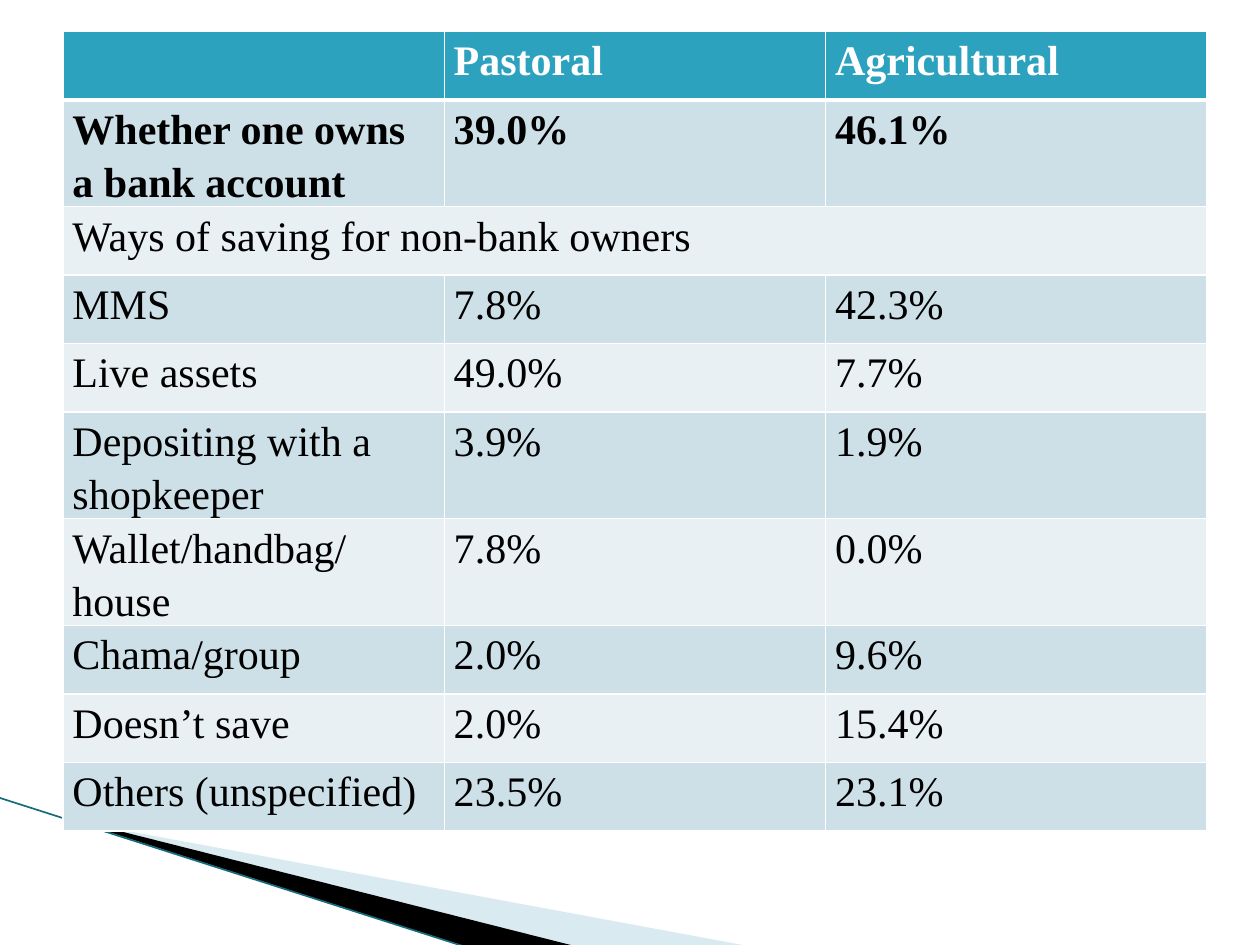
from lxml import etree
from pptx import Presentation
from pptx.dml.color import RGBColor
from pptx.enum.shapes import MSO_CONNECTOR
from pptx.oxml.ns import qn
from pptx.util import Inches, Pt

STRAIGHT = MSO_CONNECTOR.STRAIGHT
WHITE = RGBColor(0xFF, 0xFF, 0xFF)
BLACK = RGBColor(0x00, 0x00, 0x00)
HEADER_TEAL = RGBColor(0x2D, 0xA2, 0xBF)
BAND_DARK = RGBColor(0xCD, 0xE0, 0xE8)
BAND_LIGHT = RGBColor(0xE8, 0xF0, 0xF4)
WEDGE_BLUE = RGBColor(0xA0, 0xCB, 0xDC)
LINE_TEAL = RGBColor(0x16, 0x6B, 0x7E)
FONT = "Times New Roman"


def write_cell(cell, text, color=BLACK, bold=False):
    cell.margin_left = cell.margin_right = Pt(5.4)
    cell.margin_top = cell.margin_bottom = 0
    para = cell.text_frame.paragraphs[0]
    para.line_spacing = 1.15
    para.space_after = Pt(10)
    para.font.size = Pt(24)
    if text:
        span = para.add_run()
        span.text = text
        span.font.name = FONT
        span.font.size = Pt(24)
        span.font.bold = bold
        span.font.color.rgb = color


def add_border(cell, side, points):
    properties = cell._tc.get_or_add_tcPr()
    border = etree.SubElement(properties, qn(f"a:ln{side}"), w=str(Pt(points)))
    fill = etree.SubElement(border, qn("a:solidFill"))
    etree.SubElement(fill, qn("a:srgbClr"), val=str(WHITE))


deck = Presentation()
deck.slide_width = Inches(10)
deck.slide_height = Inches(7.5)
page = deck.slides.add_slide(deck.slide_layouts[6])

# Corner wedges: colour, opacity, frame, corners
wedges = [
    (WEDGE_BLUE, 40, (0.78, 5.47, 4.16, 1.58),
     [(0.55, 6.51), (5.95, 7.51), (4.56, 7.51), (0.55, 6.5)]),
    (BLACK, 100, (-0.06, 6.33, 4.16, 0.92),
     [(0.53, 6.49), (4.57, 7.51), (3.72, 7.52), (0.54, 6.5)]),
]
for color, opacity, frame, corners in wedges:
    points = [(Inches(x), Inches(y)) for x, y in corners]
    builder = page.shapes.build_freeform(*points[0])
    builder.add_line_segments(points[1:], close=True)
    wedge = builder.convert_to_shape()
    wedge.shadow.inherit = False
    wedge.line.fill.background()
    wedge.fill.solid()
    wedge.fill.fore_color.rgb = color
    if opacity < 100:
        color_node = wedge._element.spPr.find(".//" + qn("a:srgbClr"))
        etree.SubElement(color_node, qn("a:alpha"), val=str(opacity * 1000))

    # The outline reaches beyond its frame, so its points are set from the frame
    left, top, width, height = [Inches(length) for length in frame]
    wedge.left, wedge.top, wedge.width, wedge.height = left, top, width, height
    outline = wedge._element.spPr.find(".//" + qn("a:path"))
    outline.set("w", str(width))
    outline.set("h", str(height))
    for node, (x, y) in zip(outline.iter(qn("a:pt")), points):
        node.set("x", str(x - left))
        node.set("y", str(y - top))

# Edge line along the wedges
edge = page.shapes.add_connector(
    STRAIGHT, Inches(-0.01), Inches(6.33), Inches(3.71), Inches(7.52))
edge.line.color.rgb = LINE_TEAL
edge.line.width = Pt(0.95)
etree.SubElement(edge._element.spPr, qn("a:effectLst"))

# Savings table
rows = [
    ("", "Pastoral", "Agricultural"),
    ("Whether one owns a bank account", "39.0%", "46.1%"),
    ("Ways of saving for non-bank owners", "", ""),
    ("MMS", "7.8%", "42.3%"),
    ("Live assets", "49.0%", "7.7%"),
    ("Depositing with a shopkeeper", "3.9%", "1.9%"),
    ("Wallet/handbag/house", "7.8%", "0.0%"),
    ("Chama/group", "2.0%", "9.6%"),
    ("Doesn’t save", "2.0%", "15.4%"),
    ("Others (unspecified)", "23.5%", "23.1%"),
]
SECTION_ROW = 2
table = page.shapes.add_table(
    len(rows), 3, Inches(0.5), Inches(0.25), Inches(9.08), Inches(5.43)).table

for row_index, texts in enumerate(rows):
    is_header = row_index == 0
    band = BAND_DARK if row_index % 2 else BAND_LIGHT
    for column_index, text in enumerate(texts):
        cell = table.cell(row_index, column_index)
        write_cell(cell, text, color=WHITE if is_header else BLACK,
                   bold=row_index < 2)
        for side in "LRT":
            add_border(cell, side, 1)
        add_border(cell, "B", 3 if is_header else 1)
        cell.fill.solid()
        cell.fill.fore_color.rgb = HEADER_TEAL if is_header else band

table.cell(SECTION_ROW, 0).merge(table.cell(SECTION_ROW, 2))

deck.save("out.pptx")
